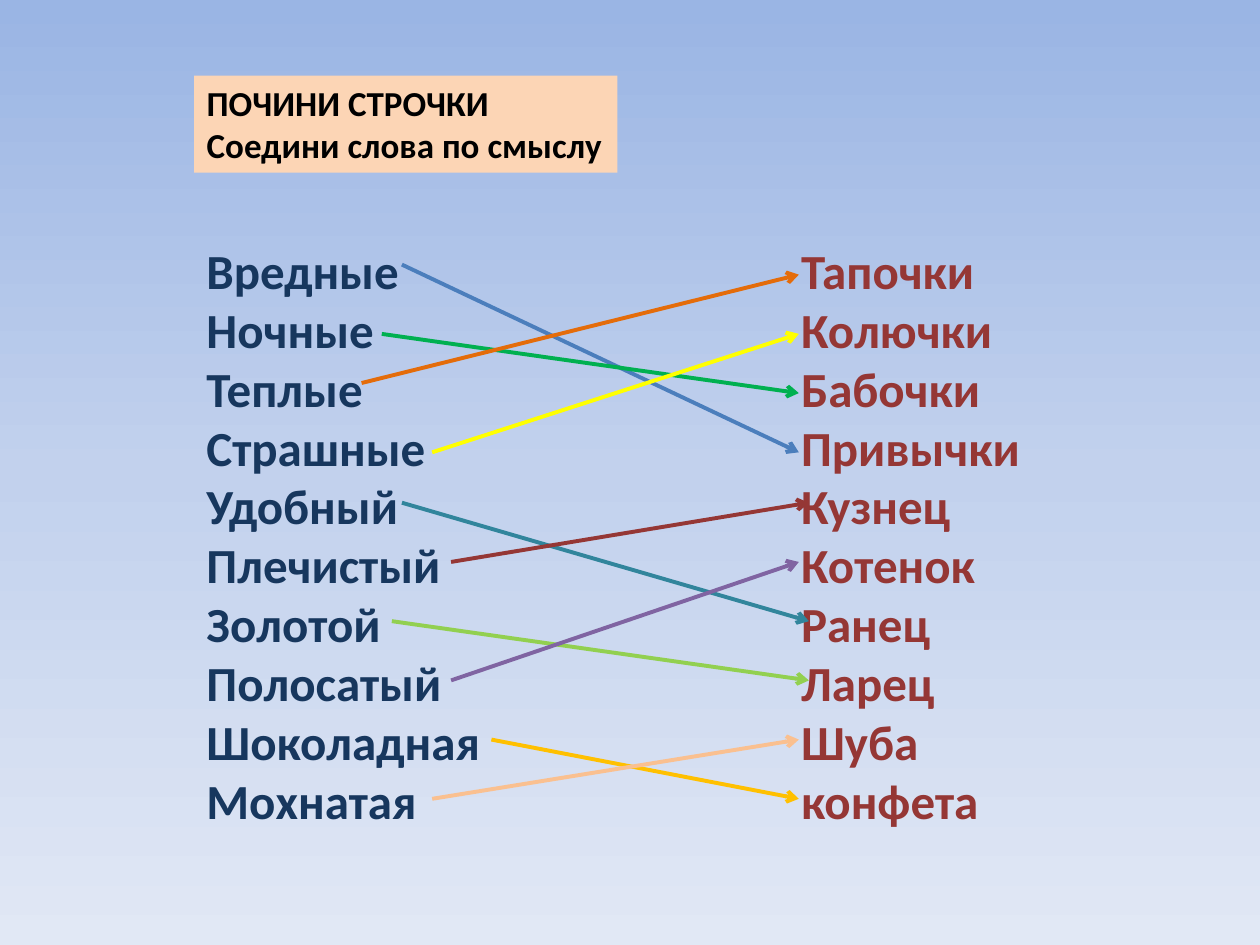
from copy import deepcopy
from dataclasses import dataclass

from lxml import etree
from pptx import Presentation
from pptx.dml.color import RGBColor
from pptx.enum.shapes import MSO_CONNECTOR
from pptx.enum.text import MSO_ANCHOR, MSO_AUTO_SIZE, PP_ALIGN
from pptx.oxml.ns import qn
from pptx.util import Inches, Pt

STRAIGHT = MSO_CONNECTOR.STRAIGHT
TOP = MSO_ANCHOR.TOP
NO_AUTOFIT = MSO_AUTO_SIZE.NONE
LEFT = PP_ALIGN.LEFT
TITLE_ONLY = 5


@dataclass(frozen=True)
class Theme:
    font: str = "Calibri"
    title_size: int = 20
    word_size: int = 28
    line_width: float = 2.25
    title_text: str = "000000"
    title_fill: str = "FCD5B5"
    adjective: str = "17375E"
    noun: str = "953735"
    background: tuple = ("9AB5E4", "C2D1ED", "E1E8F5")


THEME = Theme()

TITLE = ["ПОЧИНИ СТРОЧКИ", "Соедини слова по смыслу"]
ADJECTIVES = ["Вредные", "Ночные", "Теплые", "Страшные", "Удобный",
              "Плечистый", "Золотой", "Полосатый", "Шоколадная", "Мохнатая"]
NOUNS = ["Тапочки", "Колючки", "Бабочки", "Привычки", "Кузнец",
         "Котенок", "Ранец", "Ларец", "Шуба", "конфета"]

# Adjective, matching noun, arrow start x, arrow end x, rise of start, colour
MATCHES = [
    ("Вредные", "Привычки", 3.19, 6.34, 0.08, "4B7EBC"),
    ("Ночные", "Бабочки", 3.03, 6.34, 0, "00B050"),
    ("Теплые", "Тапочки", 2.87, 6.34, 0.08, "E46C0A"),
    ("Страшные", "Колючки", 3.43, 6.34, 0, "FFFF00"),
    ("Удобный", "Ранец", 3.19, 6.42, 0, "31859C"),
    ("Плечистый", "Кузнец", 3.58, 6.42, 0, "953735"),
    ("Золотой", "Ларец", 3.11, 6.42, 0, "92D050"),
    ("Полосатый", "Котенок", 3.58, 6.34, 0, "8064A2"),
    ("Шоколадная", "конфета", 3.9, 6.34, 0, "FFC000"),
    ("Мохнатая", "Шуба", 3.43, 6.34, 0, "FAC090"),
]


def row_y(row):
    """Height of an arrow end; the lower six rows sit slightly higher."""
    return 2.18 + 0.47 * row - (0.07 if row >= 4 else 0)


def paint_background(page):
    fill = page.background.fill
    fill.gradient()
    fill.gradient_angle = 270
    stop_list = next(page.element.iter(qn("a:gsLst")))
    stop_list.insert(1, deepcopy(stop_list[0]))
    for index, (stop, color) in enumerate(zip(fill.gradient_stops, THEME.background)):
        stop.position = index / 2
        stop.color.rgb = RGBColor.from_string(color)


def write_lines(box, lines, size, color):
    frame = box.text_frame
    frame.word_wrap = False
    frame.auto_size = NO_AUTOFIT
    frame.vertical_anchor = TOP
    for index, line in enumerate(lines):
        para = frame.paragraphs[0] if index == 0 else frame.add_paragraph()
        para.alignment = LEFT
        span = para.add_run()
        span.text = line
        span.font.name = THEME.font
        span.font.size = Pt(size)
        span.font.bold = True
        span.font.color.rgb = RGBColor.from_string(color)


def add_title(page):
    title = page.shapes.title
    title.left, title.top = Inches(1.54), Inches(0.6)
    title.width, title.height = Inches(3.36), Inches(0.77)
    title.fill.solid()
    title.fill.fore_color.rgb = RGBColor.from_string(THEME.title_fill)
    write_lines(title, TITLE, THEME.title_size, THEME.title_text)


def add_word_column(page, left, width, words, color):
    box = page.shapes.add_textbox(Inches(left), Inches(1.86), Inches(width), Inches(4.81))
    write_lines(box, words, THEME.word_size, color)


def add_arrow(page, start, end, color):
    arrow = page.shapes.add_connector(STRAIGHT, *map(Inches, start + end))
    arrow.line.width = Pt(THEME.line_width)
    arrow.line.color.rgb = RGBColor.from_string(color)
    etree.SubElement(arrow.line._get_or_add_ln(), qn("a:tailEnd"), type="arrow")
    etree.SubElement(arrow._element.spPr, qn("a:effectLst"))


def main():
    deck = Presentation()
    deck.slide_width, deck.slide_height = Inches(10), Inches(7.5)
    page = deck.slides.add_slide(deck.slide_layouts[TITLE_ONLY])
    paint_background(page)

    # Heading and the two word columns
    add_title(page)
    add_word_column(page, 1.54, 2.39, ADJECTIVES, THEME.adjective)
    add_word_column(page, 6.26, 1.96, NOUNS, THEME.noun)

    # Arrows from each adjective to its noun
    for adjective, noun, start_x, end_x, rise, color in MATCHES:
        start = (start_x, row_y(ADJECTIVES.index(adjective)) - rise)
        end = (end_x, row_y(NOUNS.index(noun)))
        add_arrow(page, start, end, color)

    deck.save("out.pptx")


if __name__ == "__main__":
    main()
